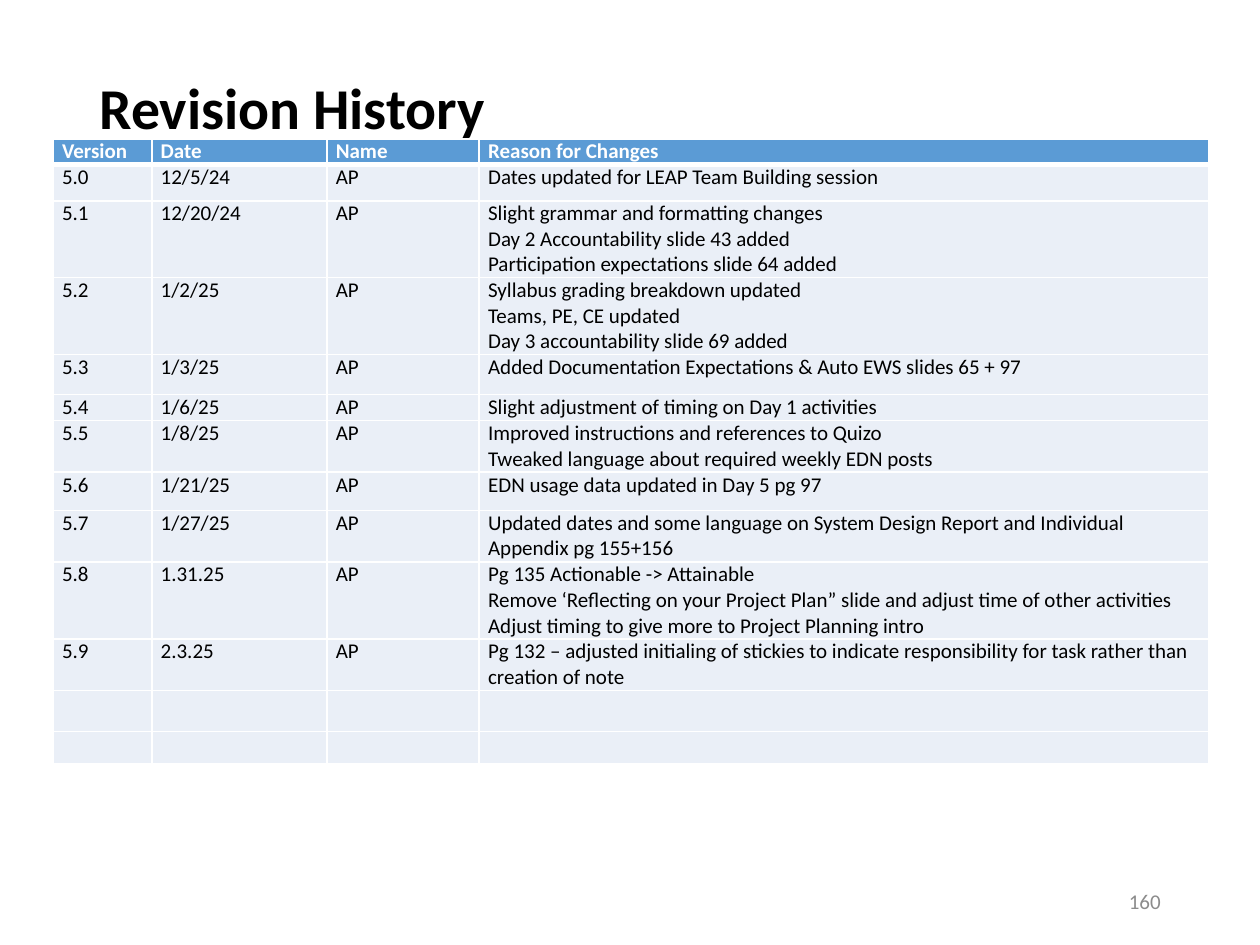
import pptx
import pptx.dml.color
import pptx.enum.text
import pptx.oxml
import pptx.oxml.ns
import pptx.util

Cm, Pt = pptx.util.Cm, pptx.util.Pt
RGB = pptx.dml.color.RGBColor.from_string
ALIGN = pptx.enum.text.PP_ALIGN
ANCHOR = pptx.enum.text.MSO_ANCHOR

# Content: version, date, name, reasons, row height in cm
TITLE = "Revision History"
PAGE = "160"
HEAD = ("Version", "Date", "Name", ["Reason for Changes"], 0.51)
ROWS = [
    HEAD,
    ("5.0", "12/5/24", "AP", ["Dates updated for LEAP Team Building session"], 0.73),
    ("5.1", "12/20/24", "AP", ["Slight grammar and formatting changes",
                               "Day 2 Accountability slide 43 added",
                               "Participation expectations slide 64 added"], 1.55),
    ("5.2", "1/2/25", "AP", ["Syllabus grading breakdown updated",
                             "Teams, PE, CE updated",
                             "Day 3 accountability slide 69 added"], 1.55),
    ("5.3", "1/3/25", "AP",
     ["Added Documentation Expectations & Auto EWS slides 65 + 97"], 0.81),
    ("5.4", "1/6/25", "AP", ["Slight adjustment of timing on Day 1 activities"], 0.52),
    ("5.5", "1/8/25", "AP", ["Improved instructions and references to Quizo",
                             "Tweaked language about required weekly EDN posts"], 1.04),
    ("5.6", "1/21/25", "AP", ["EDN usage data updated in Day 5 pg 97"], 0.77),
    ("5.7", "1/27/25", "AP",
     ["Updated dates and some language on System Design Report and Individual "
      "Appendix pg 155+156"], 1.04),
    ("5.8", "1.31.25", "AP",
     ["Pg 135 Actionable -> Attainable",
      "Remove ‘Reflecting on your Project Plan” slide and adjust time of other activities",
      "Adjust timing to give more to Project Planning intro"], 1.55),
    ("5.9", "2.3.25", "AP",
     ["Pg 132 – adjusted initialing of stickies to indicate responsibility for task "
      "rather than creation of note"], 1.04),
    ("", "", "", [""], 0.83),
    ("", "", "", [""], 0.65),
]
WIDTHS = (1.99, 3.53, 3.07, 14.7)
COLORS = {"head": "5B9BD5", "body": "EAEFF7", "white": "FFFFFF",
          "text": "000000", "page": "8C8C8C"}


def style(para, size, color, bold=False):
    font = para.font
    font.name, font.size, font.bold = "Calibri", Pt(size), bold
    font.color.rgb = RGB(COLORS[color])


def border(cell, side, width):
    props = cell._tc.get_or_add_tcPr()
    props.append(pptx.oxml.parse_xml(
        f'<a:ln{side} {pptx.oxml.ns.nsdecls("a")} w="{Pt(width)}"><a:solidFill>'
        f'<a:srgbClr val="{COLORS["white"]}"/></a:solidFill></a:ln{side}>'))


def fill_cell(cell, lines, row):
    head = row == 0
    cell.margin_left = cell.margin_right = Cm(0.18)
    cell.margin_top = cell.margin_bottom = 0
    # The rule under the header is thicker than the rest
    thick = {("B", 0): 3, ("T", 1): 3}
    for side in "LRTB":
        border(cell, side, thick.get((side, row), 1))
    cell.fill.solid()
    cell.fill.fore_color.rgb = RGB(COLORS["head" if head else "body"])
    cell.text_frame.text = "\n".join(lines)
    for para in cell.text_frame.paragraphs:
        style(para, 12, "white" if head else "text", head)


def main():
    deck = pptx.Presentation()
    deck.slide_width, deck.slide_height = Cm(25.4), Cm(19.05)
    slide = deck.slides.add_slide(deck.slide_layouts[5])

    # Title
    title = slide.shapes.title
    title.left, title.top = Cm(1.75), Cm(1.02)
    title.width, title.height = Cm(21.9), Cm(3.68)
    frame = title.text_frame
    frame.text = TITLE
    frame.auto_size = pptx.enum.text.MSO_AUTO_SIZE.NONE
    frame.vertical_anchor = ANCHOR.MIDDLE
    frame.margin_bottom = Cm(1.4)
    para = frame.paragraphs[0]
    para.alignment, para.line_spacing = ALIGN.LEFT, 0.9
    style(para, 33, "text", True)

    # Revision table
    high = sum(row[-1] for row in ROWS)
    table = slide.shapes.add_table(len(ROWS), len(WIDTHS), Cm(1.07), Cm(2.8),
                                   Cm(sum(WIDTHS)), Cm(high)).table
    table.horz_banding = False
    for col, width in zip(table.columns, WIDTHS):
        col.width = Cm(width)
    for r, (ver, date, name, notes, height) in enumerate(ROWS):
        table.rows[r].height = Cm(height)
        for c, lines in enumerate(([ver], [date], [name], notes)):
            fill_cell(table.cell(r, c), lines, r)

    # Page number
    page = slide.shapes.add_textbox(Cm(17.93), Cm(17.65), Cm(5.72), Cm(1.02))
    frame = page.text_frame
    frame.word_wrap = True
    frame.vertical_anchor = ANCHOR.MIDDLE
    frame.text = PAGE
    frame.paragraphs[0].alignment = ALIGN.RIGHT
    style(frame.paragraphs[0], 12, "page")

    deck.save("out.pptx")


if __name__ == "__main__":
    main()
